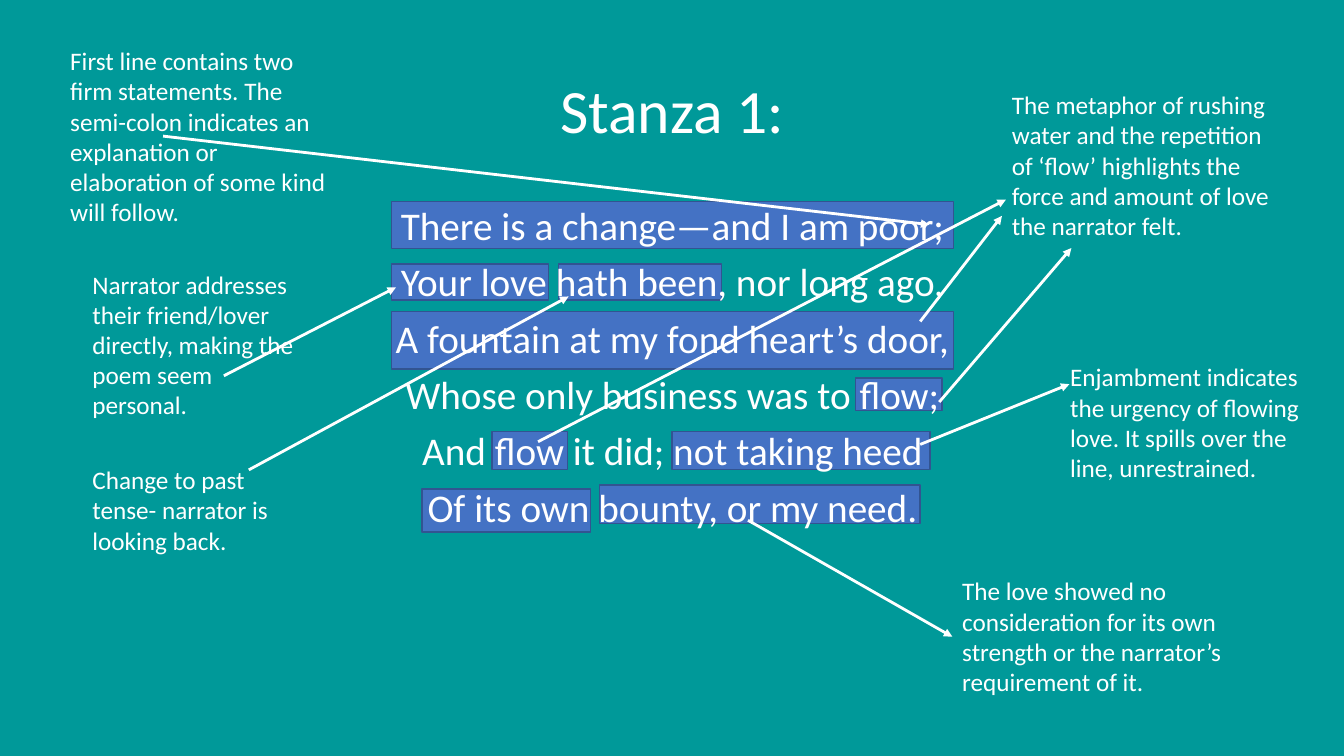
from pptx import Presentation
from pptx.dml.color import RGBColor
from pptx.enum.shapes import MSO_CONNECTOR, MSO_SHAPE
from pptx.enum.text import MSO_ANCHOR, PP_ALIGN
from pptx.oxml.ns import qn
from pptx.util import Cm, Pt
from lxml import etree

COLORS = {
    "background": "009999",
    "text": "FFFFFF",
    "highlight": "4472C4",
    "outline": "325491",
}
FONT = "Calibri"

# left, top, width, height in cm
HIGHLIGHTS = [
    (15.11, 12.22, 8.08, 0.97),
    (10.64, 12.32, 4.24, 1.09),
    (16.94, 10.87, 6.5, 0.97),
    (12.4, 10.87, 1.91, 0.97),
    (21.56, 9.53, 2.18, 0.81),
    (9.86, 7.85, 14.17, 1.45),
    (14.07, 6.65, 4.11, 0.91),
    (9.86, 6.65, 3.96, 0.91),
    (9.86, 5.08, 14.17, 1.19),
]

TITLE_BOX = (2.34, 1.02, 29.21, 3.68)
POEM_BOX = (2.34, 5.08, 29.21, 12.09)
POEM = [
    "There is a change—and I am poor;",
    "Your love hath been, nor long ago,",
    "A fountain at my fond heart’s door,",
    "Whose only business was to flow;",
    "And flow it did; not taking heed",
    "Of its own bounty, or my need.",
]

NOTES = [
    ((1.52, 1.02, 7.16, 4.88),
     "First line contains two firm statements. The semi-colon indicates an "
     "explanation or elaboration of some kind will follow."),
    ((2.08, 11.58, 5.79, 2.57),
     "Change to past tense- narrator is looking back."),
    ((2.08, 6.65, 5.77, 4.11),
     "Narrator addresses their friend/lover directly, making the poem seem "
     "personal."),
    ((25.25, 2.13, 7.09, 4.11),
     "The metaphor of rushing water and the repetition of ‘flow’ highlights "
     "the force and amount of love the narrator felt."),
    ((26.72, 8.99, 6.63, 3.33),
     "Enjambment indicates the urgency of flowing love. It spills over the "
     "line, unrestrained."),
]
STRENGTH_NOTE = (
    (24, 14.38, 8.61, 3.33),
    "The love showed no consideration for its own strength or the narrator’s "
    "requirement of it.")

# start x, start y, end x, end y in cm
ARROWS = [
    (23.19, 11.2, 26.95, 9.68),
    (4.11, 3.43, 23.42, 5.66),
    (6.27, 11.84, 14.33, 7.47),
    (5.64, 9.47, 9.98, 7.24),
    (23.19, 8.1, 25.25, 5.44),
    (23.67, 10.13, 27, 6.25),
    (13.56, 11.13, 25.35, 5.03),
]
STRENGTH_ARROW = (18.85, 13.11, 24, 16.03)


def color(name):
    return RGBColor.from_string(COLORS[name])


def add_highlight(slide, box):
    shape = slide.shapes.add_shape(MSO_SHAPE.RECTANGLE, *map(Cm, box))
    shape.shadow.inherit = False
    shape.fill.solid()
    shape.fill.fore_color.rgb = color("highlight")
    shape.line.color.rgb = color("outline")
    shape.line.width = Pt(1)


def add_text(slide, box, lines, size, align=PP_ALIGN.LEFT,
             anchor=MSO_ANCHOR.TOP, line_spacing=1.0, space_before=0):
    shape = slide.shapes.add_textbox(*map(Cm, box))
    frame = shape.text_frame
    frame.word_wrap = True
    frame.vertical_anchor = anchor
    for index, line in enumerate(lines):
        paragraph = frame.add_paragraph() if index else frame.paragraphs[0]
        paragraph.alignment = align
        paragraph.line_spacing = line_spacing
        paragraph.space_before = Pt(space_before if index else 0)
        run = paragraph.add_run()
        run.text = line
        run.font.name = FONT
        run.font.size = Pt(size)
        run.font.color.rgb = color("text")
    return shape


def add_note(slide, box, text):
    return add_text(slide, box, [text], 18)


def add_arrow(slide, ends):
    arrow = slide.shapes.add_connector(MSO_CONNECTOR.STRAIGHT, *map(Cm, ends))
    arrow.line.color.rgb = color("text")
    arrow.line.width = Pt(2)
    outline = arrow.line._get_or_add_ln()
    etree.SubElement(outline, qn("a:tailEnd"), type="triangle")
    etree.SubElement(arrow._element.spPr, qn("a:effectLst"))
    return arrow


def main():
    presentation = Presentation()
    presentation.slide_width = Cm(33.87)
    presentation.slide_height = Cm(19.05)
    slide = presentation.slides.add_slide(presentation.slide_layouts[6])
    slide.background.fill.solid()
    slide.background.fill.fore_color.rgb = color("background")

    for box in HIGHLIGHTS:
        add_highlight(slide, box)
    add_text(slide, TITLE_BOX, ["Stanza 1:"], 44, PP_ALIGN.CENTER,
             MSO_ANCHOR.MIDDLE, line_spacing=0.9)
    add_text(slide, POEM_BOX, POEM, 28, PP_ALIGN.CENTER,
             line_spacing=0.9, space_before=10)
    for box, text in NOTES:
        add_note(slide, box, text)
    for ends in ARROWS:
        add_arrow(slide, ends)
    strength_note = add_note(slide, *STRENGTH_NOTE)
    add_arrow(slide, STRENGTH_ARROW).end_connect(strength_note, 1)

    presentation.save("out.pptx")


if __name__ == "__main__":
    main()
